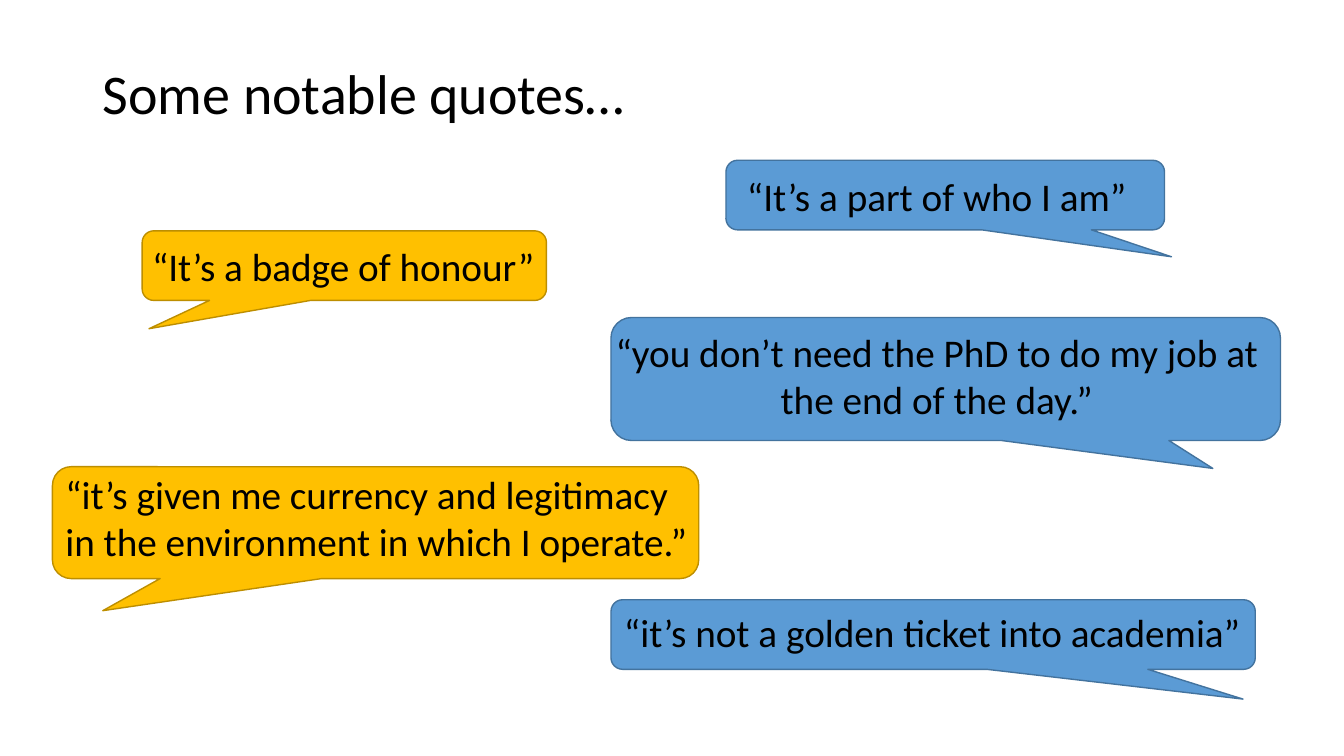
import dataclasses

import pptx
import pptx.dml.color
import pptx.enum.shapes
import pptx.enum.text
import pptx.slide
import pptx.util

Inches = pptx.util.Inches
Align = pptx.enum.text.PP_ALIGN
Anchor = pptx.enum.text.MSO_ANCHOR
Area = tuple[float, float, float, float]

COLORS = {
    "text": "000000",
    "blue": "5B9BD5",
    "blue_edge": "43739E",
    "gold": "FFC000",
    "gold_edge": "BD8E00",
}
FONT = "Calibri"
CORNER = 0.167


@dataclasses.dataclass(frozen=True)
class Label:
    area: Area
    text: str
    size: int = 28
    align: Align = Align.LEFT
    anchor: Anchor = Anchor.TOP
    line_spacing: float = 1.0


@dataclasses.dataclass(frozen=True)
class Quote:
    bubble: Area
    tail: tuple[float, float]
    color: str
    label: Label


TITLE = Label((0.92, 0.4, 5.81, 1.12), "Some notable quotes…", size=40,
              anchor=Anchor.MIDDLE, line_spacing=0.9)

QUOTES = [
    Quote((7.2, 1.59, 4.35, 0.69), (0.516, 0.887), "blue",
          Label((7.31, 1.66, 4.13, 0.57), "“It’s a part of who I am”")),
    Quote((1.41, 2.29, 4.01, 0.69), (-0.483, 0.907), "gold",
          Label((1.41, 2.35, 4.13, 0.57), "“It’s a badge of honour”")),
    Quote((6.06, 3.15, 6.64, 1.22), (0.399, 0.727), "blue",
          Label((5.97, 3.21, 6.64, 1.04),
                "“you don’t need the PhD to do my job at the end of the day.”",
                align=Align.CENTER)),
    Quote((0.52, 4.63, 6.41, 1.11), (-0.422, 0.787), "gold",
          Label((0.55, 4.62, 6.54, 1.04),
                "“it’s given me currency and legitimacy in the environment "
                "in which I operate.”")),
    Quote((6.06, 5.95, 6.39, 0.69), (0.481, 0.928), "blue",
          Label((6.09, 6.04, 6.58, 0.53),
                "“it’s not a golden ticket into academia”", line_spacing=0.9)),
]


def rgb(name: str) -> pptx.dml.color.RGBColor:
    return pptx.dml.color.RGBColor.from_string(COLORS[name])


def add_label(page: pptx.slide.Slide, label: Label) -> None:
    box = page.shapes.add_textbox(*map(Inches, label.area))
    frame = box.text_frame
    frame.word_wrap = True
    frame.vertical_anchor = label.anchor
    para = frame.paragraphs[0]
    para.text = label.text
    para.alignment = label.align
    para.line_spacing = label.line_spacing
    para.font.name = FONT
    para.font.size = pptx.util.Pt(label.size)
    para.font.color.rgb = rgb("text")


def add_quote(page: pptx.slide.Slide, quote: Quote) -> None:
    bubble = page.shapes.add_shape(
        pptx.enum.shapes.MSO_SHAPE.ROUNDED_RECTANGULAR_CALLOUT,
        *map(Inches, quote.bubble))
    for index, value in enumerate((*quote.tail, CORNER)):
        bubble.adjustments[index] = value
    bubble.shadow.inherit = False
    bubble.fill.solid()
    bubble.fill.fore_color.rgb = rgb(quote.color)
    bubble.line.color.rgb = rgb(f"{quote.color}_edge")
    bubble.line.width = pptx.util.Pt(1)
    add_label(page, quote.label)


def main() -> None:
    deck = pptx.Presentation()
    deck.slide_width = Inches(13.33)
    deck.slide_height = Inches(7.5)
    page = deck.slides.add_slide(deck.slide_layouts[6])
    add_label(page, TITLE)
    for quote in QUOTES:
        add_quote(page, quote)
    deck.save("out.pptx")


if __name__ == "__main__":
    main()
